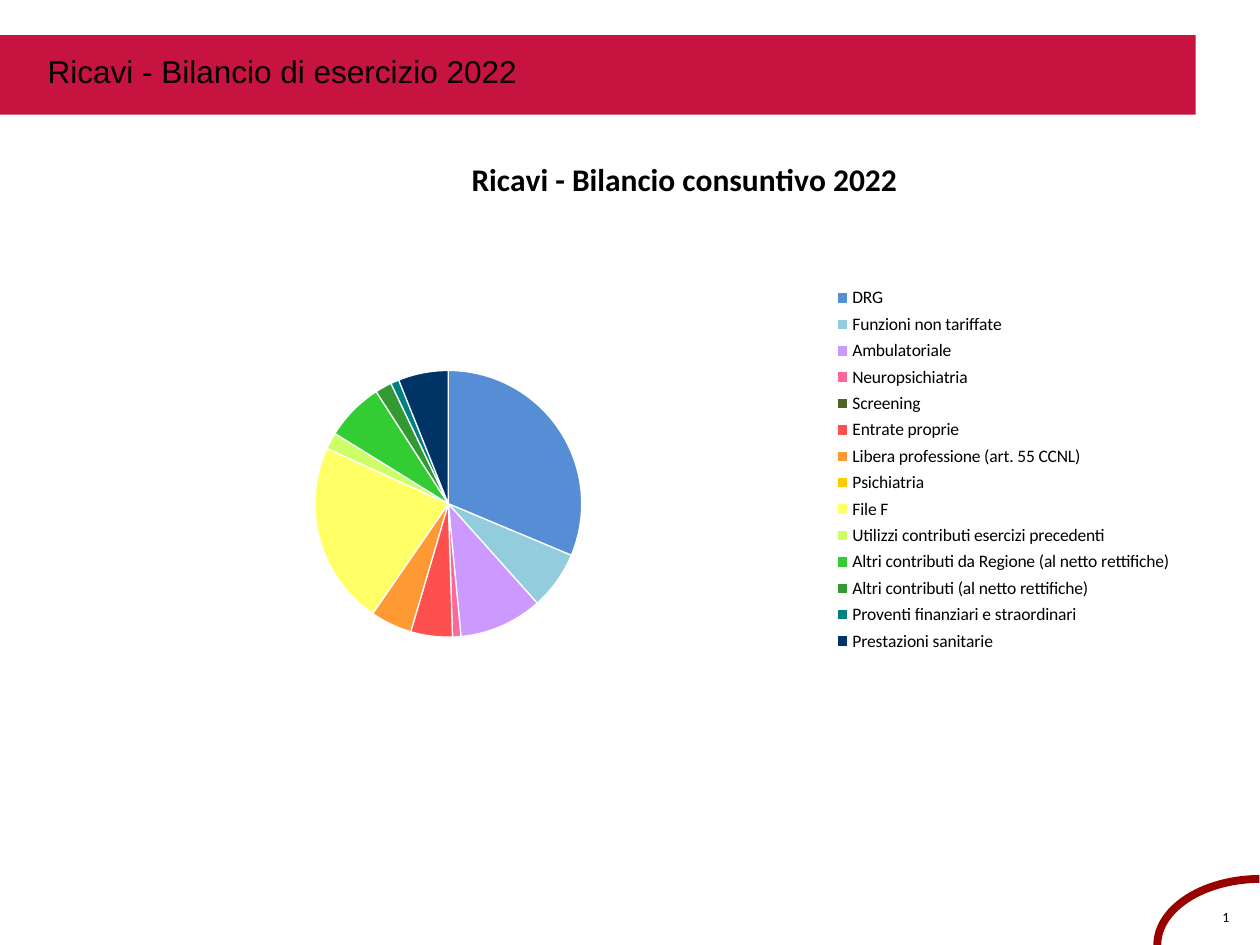
from lxml import etree
from pptx import Presentation
from pptx.chart.data import CategoryChartData
from pptx.dml.color import RGBColor
from pptx.enum.chart import XL_CHART_TYPE, XL_LEGEND_POSITION
from pptx.enum.shapes import MSO_SHAPE
from pptx.enum.text import PP_ALIGN
from pptx.oxml import parse_xml
from pptx.oxml.ns import nsdecls
from pptx.util import Inches, Pt

PIE = XL_CHART_TYPE.PIE
RIGHT = XL_LEGEND_POSITION.RIGHT
RECT, ARC = MSO_SHAPE.RECTANGLE, MSO_SHAPE.ARC
CENTER = PP_ALIGN.CENTER

# Category, share of revenue in percent, slice colour
REVENUES = [
    ("DRG", 31, "558ED5"),
    ("Funzioni non tariffate", 7, "93CDDD"),
    ("Ambulatoriale", 10, "CC99FF"),
    ("Neuropsichiatria", 1, "FF6699"),
    ("Screening", 0, "4F6228"),
    ("Entrate proprie", 5, "FF5050"),
    ("Libera professione (art. 55 CCNL)", 5, "FF9933"),
    ("Psichiatria", 0, "FFCC00"),
    ("File F", 22, "FFFF66"),
    ("Utilizzi contributi esercizi precedenti", 2, "CCFF66"),
    ("Altri contributi da Regione (al netto rettifiche)", 7, "33CC33"),
    ("Altri contributi (al netto rettifiche)", 2, "339933"),
    ("Proventi finanziari e straordinari", 1, "008080"),
    ("Prestazioni sanitarie", 6, "003366"),
]


def rgb(hex_color):
    return RGBColor.from_string(hex_color)


def set_font(font, name, size, bold=False):
    font.name, font.size, font.bold = name, Pt(size), bold
    font.color.rgb = rgb("000000")


def add_text(s, x, y, w, h, text, font, size):
    tf = s.shapes.add_textbox(Inches(x), Inches(y), Inches(w), Inches(h)).text_frame
    tf.word_wrap = True
    p = tf.paragraphs[0]
    p.text = text
    set_font(p.font, font, size)
    return tf


def add_header(s, x, y, w, h):
    band = s.shapes.add_shape(RECT, Inches(x), Inches(y), Inches(w), Inches(h))
    band.shadow.inherit = False
    band.fill.solid()
    band.fill.fore_color.rgb = rgb("C6133F")
    band.line.fill.background()
    add_text(s, x + 0.28, y + 0.08, 6.22, 0.71,
             "Ricavi - Bilancio di esercizio 2022", "Arial", 18)


def add_page_corner(s, x, y, w, h):
    # Quarter arc, turned so that it opens towards the slide corner
    arc = s.shapes.add_shape(ARC, Inches(x), Inches(y), Inches(w), Inches(h))
    arc.rotation = 270
    arc.adjustments[0], arc.adjustments[1] = 162, 215.34
    arc.shadow.inherit = False
    arc.fill.background()
    arc.line.color.rgb = rgb("990000")
    arc.line.width = Pt(4.5)
    # Page number
    tf = add_text(s, x + 0.09, y + 0.5, 0.32, 0.16, "1", "Calibri", 8)
    tf.margin_left = tf.margin_right = tf.margin_bottom = 0
    tf.margin_top = Inches(0.03)
    tf.paragraphs[0].alignment = CENTER


def manual_layout(inner=False, **fractions):
    layout = parse_xml(f"<c:layout {nsdecls('c')}><c:manualLayout/></c:layout>")
    settings = {"layoutTarget": "inner"} if inner else {}
    settings |= {"xMode": "edge", "yMode": "edge"} | fractions
    for tag, value in settings.items():
        child = etree.SubElement(layout[0], layout.tag.replace("layout", tag))
        child.set("val", str(value))
    return layout


def place(element, layout, after=None):
    for old in element.findall(layout.tag):
        element.remove(old)
    if after is None:
        element.insert(0, layout)
    else:
        after.addnext(layout)


def add_revenue_pie(s, x, y, w, h):
    names, shares, colors = zip(*REVENUES)
    data = CategoryChartData()
    data.categories = names
    data.add_series("Series 1", shares)
    chart = s.shapes.add_chart(
        PIE, Inches(x), Inches(y), Inches(w), Inches(h), data).chart
    set_font(chart.font, "Calibri", 10)

    # Slices
    plot = chart.plots[0]
    plot.vary_by_categories = True
    for i, color in enumerate(colors):
        fmt = plot.series[0].points[i].format
        fmt.fill.solid()
        fmt.fill.fore_color.rgb = rgb(color)
        fmt.line.color.rgb = rgb("FFFFFF")
        fmt.line.width = Pt(0.75)

    # Title
    chart.has_title = True
    p = chart.chart_title.text_frame.paragraphs[0]
    p.text = "Ricavi - Bilancio consuntivo 2022"
    set_font(p.font, "Calibri", 18, bold=True)

    # Legend
    chart.has_legend = True
    chart.legend.position = RIGHT
    chart.legend.include_in_layout = False
    set_font(chart.legend.font, "Calibri", 10)

    # Positions as fractions of the chart area
    area = chart._chartSpace.chart
    title, legend = area.find("c:title", area.nsmap), area.find("c:legend", area.nsmap)
    place(title, manual_layout(x=0.36, y=0.03), title.find("c:tx", area.nsmap))
    place(area.plotArea, manual_layout(inner=True, x=0.06, y=0.35, w=0.57, h=0.39))
    place(legend, manual_layout(x=0.67, y=0.22, w=0.3, h=0.55),
          legend.find("c:legendPos", area.nsmap))


def main():
    prs = Presentation()
    prs.slide_width, prs.slide_height = Inches(10), Inches(7.5)
    s = prs.slides.add_slide(prs.slide_layouts[6])
    add_page_corner(s, 9.48, 6.68, 1.05, 1.64)
    add_header(s, 0, 0.28, 9.49, 0.63)
    add_revenue_pie(s, 0.36, 1.04, 9.27, 5.43)
    prs.save("out.pptx")


if __name__ == "__main__":
    main()
